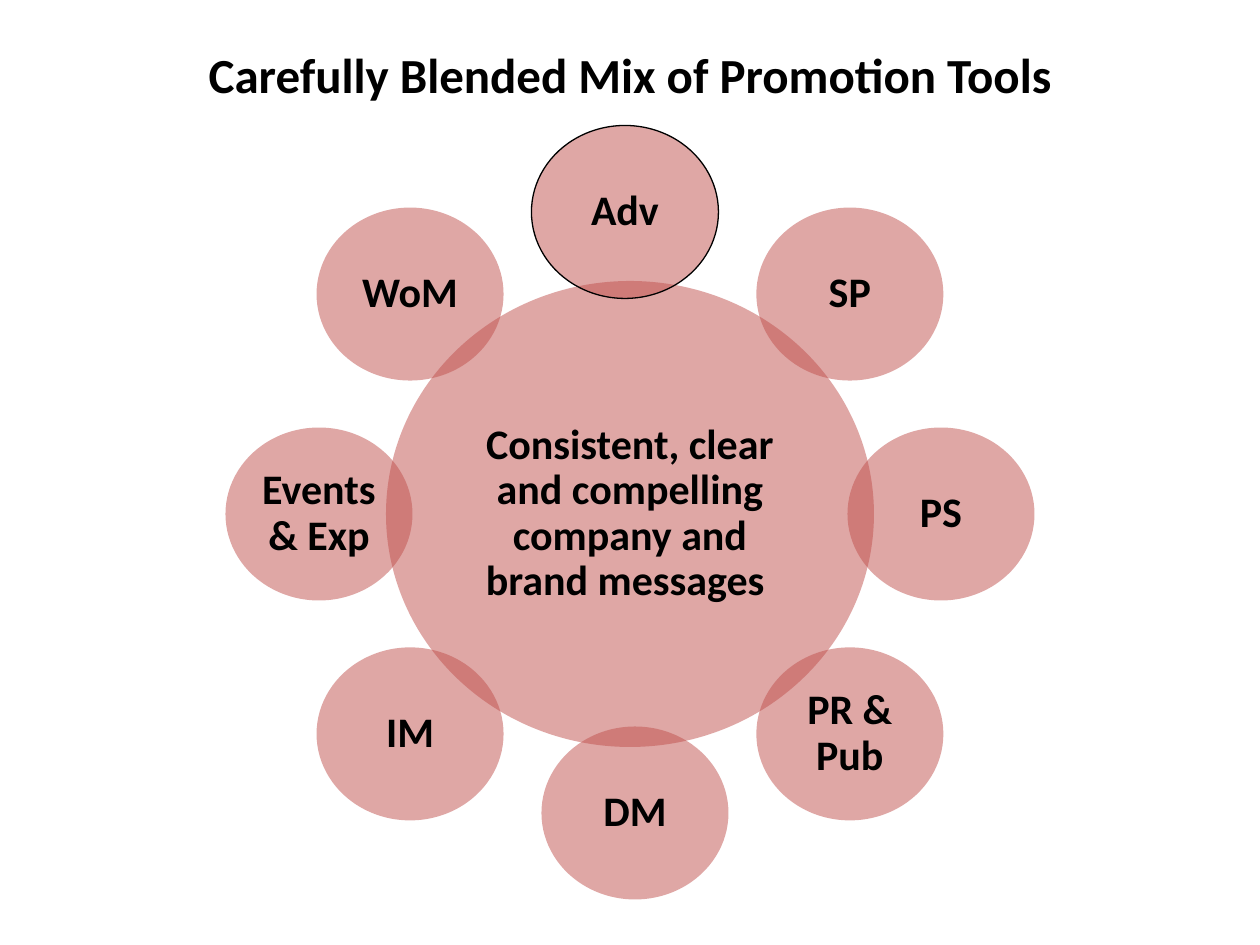
from dataclasses import dataclass
from math import cos, radians, sin

from lxml.etree import SubElement
from pptx import Presentation
from pptx.dml.color import RGBColor
from pptx.enum.shapes import MSO_SHAPE as Shape
from pptx.enum.text import MSO_ANCHOR as Anchor, PP_ALIGN as Align
from pptx.oxml.ns import qn
from pptx.util import Emu, Pt

EMU_PER_PX = 914400 / 126


def px(length):
    return Emu(round(length * EMU_PER_PX))


@dataclass(frozen=True)
class Theme:
    font: str = "Calibri"
    ink: RGBColor = RGBColor(0, 0, 0)
    circle: RGBColor = RGBColor(0xC0, 0x50, 0x4D)
    opacity: int = 50
    title_size: int = 28
    label_size: int = 24
    inset: int = 4


class SlideBuilder:
    def __init__(self, presentation, theme):
        self.theme = theme
        self.slide = presentation.slides.add_slide(presentation.slide_layouts[5])
        self.group = None

    def set_text(self, text_frame, text, size):
        text_frame.text = text
        text_frame.word_wrap = True
        text_frame.vertical_anchor = Anchor.MIDDLE
        paragraph = text_frame.paragraphs[0]
        paragraph.alignment = Align.CENTER
        font = paragraph.runs[0].font
        font.name, font.size, font.bold = self.theme.font, Pt(size), True
        font.color.rgb = self.theme.ink
        return paragraph

    def title(self, text, left, top, width, height):
        title = self.slide.shapes.title
        title.left, title.top = px(left), px(top)
        title.width, title.height = px(width), px(height)
        self.set_text(title.text_frame, text, self.theme.title_size)

    def start_group(self):
        self.group = self.slide.shapes.add_group_shape()

    def circle(self, text, center, size, outlined=False):
        (x, y), (width, height) = center, size
        shape = self.group.shapes.add_shape(
            Shape.OVAL, px(x - width / 2), px(y - height / 2), px(width), px(height))
        shape.shadow.inherit = False

        # Translucent fill, so that overlaps show darker
        shape.fill.solid()
        shape.fill.fore_color.rgb = self.theme.circle
        color = shape.element.spPr.find(".//" + qn("a:srgbClr"))
        SubElement(color, qn("a:alpha"), val=str(self.theme.opacity * 1000))

        if outlined:
            shape.line.color.rgb = self.theme.ink
            shape.line.width = Pt(0.75)
        else:
            shape.line.fill.background()

        frame = shape.text_frame
        frame.margin_left = frame.margin_right = px(self.theme.inset)
        frame.margin_top = frame.margin_bottom = px(self.theme.inset)
        self.set_text(frame, text, self.theme.label_size).line_spacing = 0.9


def main():
    presentation = Presentation()
    presentation.slide_width, presentation.slide_height = px(1260), px(945)
    builder = SlideBuilder(presentation, Theme())

    # Title
    builder.title("Carefully Blended Mix of Promotion Tools", 63, 21, 1134, 105)

    # Central message
    builder.start_group()
    hub_x, hub_y = 630, 514
    builder.circle("Consistent, clear and compelling company and brand messages ",
                   (hub_x, hub_y), (488, 466))

    # Promotion tools, clockwise from the top
    tools = ["Adv", "SP", "PS", "PR & Pub", "DM", "IM", "Events & Exp", "WoM"]
    nudges = {"Adv": (-5, 9), "DM": (5, -12)}
    radius = 311
    for index, tool in enumerate(tools):
        angle = radians(360 / len(tools) * index - 90)
        shift_x, shift_y = nudges.get(tool, (0, 0))
        center = (hub_x + radius * cos(angle) + shift_x,
                  hub_y + radius * sin(angle) + shift_y)
        builder.circle(tool, center, (187, 173), outlined=tool == "Adv")

    presentation.save("out.pptx")


if __name__ == "__main__":
    main()
